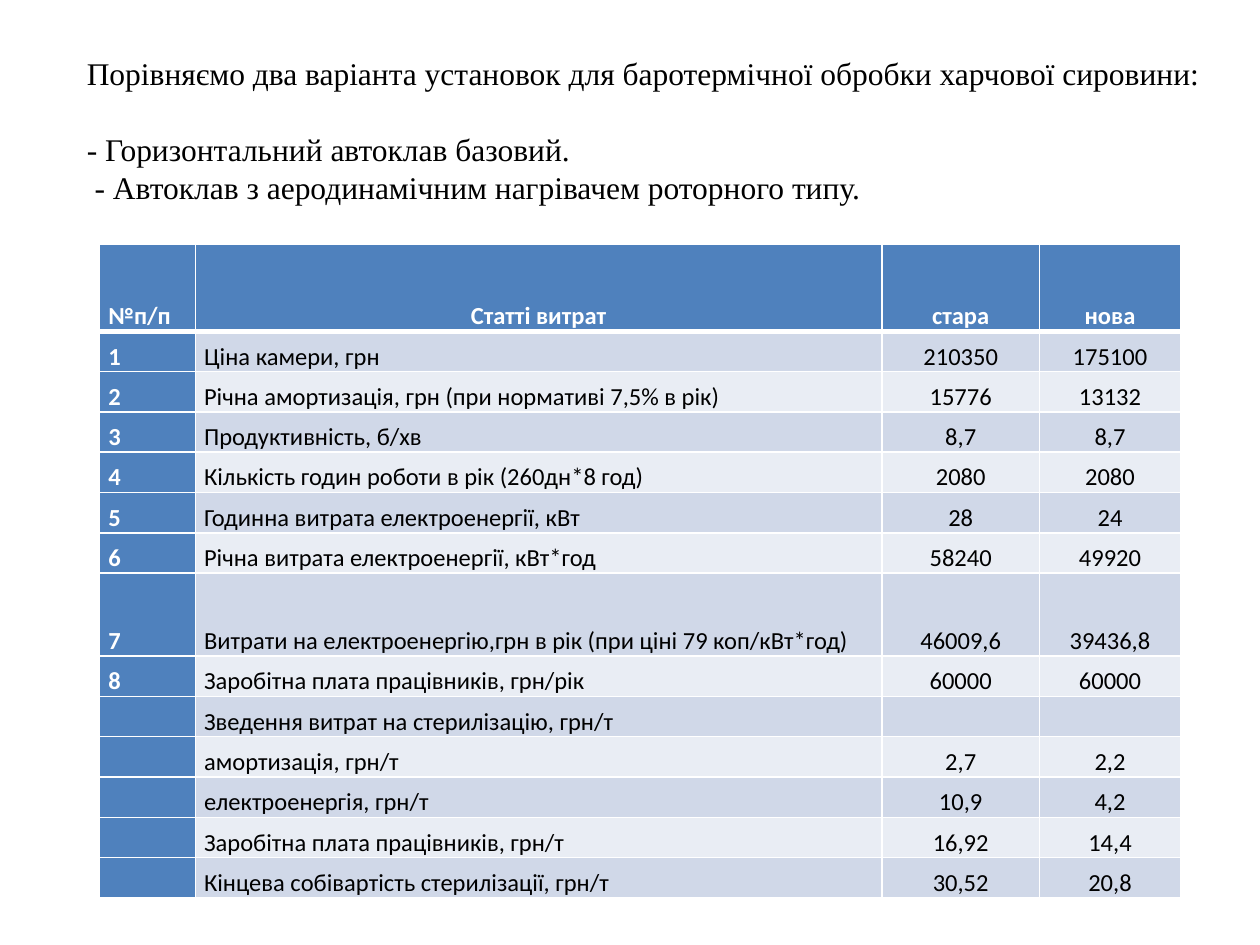
from dataclasses import dataclass

from lxml.etree import SubElement
from pptx import Presentation
from pptx.dml.color import RGBColor
from pptx.enum.text import MSO_ANCHOR as Anchor, MSO_AUTO_SIZE as AutoSize, PP_ALIGN as Align
from pptx.oxml.ns import qn
from pptx.util import Inches, Pt


@dataclass(frozen=True)
class Theme:
    accent: str = "4F81BD"
    bands: tuple = ("D0D8E8", "E9EDF4")
    light: str = "FFFFFF"
    dark: str = "000000"
    intro_font: str = "Times New Roman"
    table_font: str = "Calibri"
    intro_size: float = 18
    table_size: float = 14
    thin: float = 1
    thick: float = 3


INTRO = [
    "Порівняємо два варіанта установок для баротермічної обробки харчової сировини:",
    "- Горизонтальний автоклав базовий.",
    " - Автоклав з аеродинамічним нагрівачем роторного типу.",
]
COSTS = [
    ("№п/п", "Статті витрат", "стара", "нова"),
    ("1", "Ціна камери, грн", "210350", "175100"),
    ("2", "Річна амортизація, грн (при нормативі 7,5% в рік)", "15776", "13132"),
    ("3", "Продуктивність, б/хв", "8,7", "8,7"),
    ("4", "Кількість годин роботи в рік (260дн*8 год)", "2080", "2080"),
    ("5", "Годинна витрата електроенергії, кВт", "28", "24"),
    ("6", "Річна витрата електроенергії, кВт*год", "58240", "49920"),
    ("7", "Витрати на електроенергію,грн в рік (при ціні 79 коп/кВт*год)", "46009,6", "39436,8"),
    ("8", "Заробітна плата працівників, грн/рік", "60000", "60000"),
    ("", "Зведення витрат на стерилізацію, грн/т", "", ""),
    ("", "амортизація, грн/т", "2,7", "2,2"),
    ("", "електроенергія, грн/т", "10,9", "4,2"),
    ("", "Заробітна плата працівників, грн/т", "16,92", "14,4"),
    ("", "Кінцева собівартість стерилізації, грн/т", "30,52", "20,8"),
]
COLUMN_WIDTHS = (0.76, 5.45, 1.25, 1.12)
ROW_HEIGHT = 0.32
TALL_ROWS = {0: 0.69, 7: 0.66}


class SlideBuilder:
    def __init__(self, presentation, theme):
        self.theme = theme
        self.width = presentation.slide_width
        self.height = presentation.slide_height
        self.slide = presentation.slides.add_slide(presentation.slide_layouts[6])

    def box(self, left, top, width, height):
        """Turn percentages of the slide's size into lengths."""
        return (int(left * self.width / 100), int(top * self.height / 100),
                int(width * self.width / 100), int(height * self.height / 100))

    def style(self, paragraph, font_name, size, color, bold=False):
        font = paragraph.font
        font.name, font.size, font.bold = font_name, Pt(size), bold
        font.color.rgb = RGBColor.from_string(color)

    def text(self, lines, *place):
        frame = self.slide.shapes.add_textbox(*self.box(*place)).text_frame
        frame.word_wrap = False
        frame.auto_size = AutoSize.NONE
        frame.text = "\n".join(lines)
        for paragraph in frame.paragraphs:
            self.style(paragraph, self.theme.intro_font, self.theme.intro_size, self.theme.dark)
        # One line of air between the heading and the list
        frame.paragraphs[0].space_after = Pt(1.2 * self.theme.intro_size)

    def borders(self, cell, bottom):
        properties = cell._tc.get_or_add_tcPr()
        widths = {"a:lnL": self.theme.thin, "a:lnR": self.theme.thin,
                  "a:lnT": self.theme.thin, "a:lnB": bottom}
        for tag, width in widths.items():
            line = SubElement(properties, qn(tag), w=str(Pt(width)))
            fill = SubElement(line, qn("a:solidFill"))
            SubElement(fill, qn("a:srgbClr"), val=self.theme.light)

    def cell(self, cell, text, row, column):
        theme = self.theme
        is_header = row == 0
        is_accent = is_header or column == 0
        self.borders(cell, theme.thick if is_header else theme.thin)
        cell.fill.solid()
        color = theme.accent if is_accent else theme.bands[(row - 1) % 2]
        cell.fill.fore_color.rgb = RGBColor.from_string(color)
        cell.margin_left = cell.margin_right = Inches(0.07)
        cell.margin_top = cell.margin_bottom = 0
        cell.vertical_anchor = Anchor.BOTTOM
        cell.text = text
        paragraph = cell.text_frame.paragraphs[0]
        is_centred = column > 1 or (is_header and column == 1)
        paragraph.alignment = Align.CENTER if is_centred else Align.LEFT
        paragraph.line_spacing = 1.15
        paragraph.space_after = Pt(10)
        self.style(paragraph, theme.table_font, theme.table_size,
                   theme.light if is_accent else theme.dark, is_accent)

    def table(self, rows, column_widths, row_heights, *place):
        shape = self.slide.shapes.add_table(len(rows), len(column_widths), *self.box(*place))
        table = shape.table
        table.first_row = table.horz_banding = False
        for column, width in zip(table.columns, column_widths):
            column.width = Inches(width)
        for row, height in zip(table.rows, row_heights):
            row.height = Inches(height)
        for row, values in enumerate(rows):
            for column, value in enumerate(values):
                self.cell(table.cell(row, column), value, row, column)


def main():
    presentation = Presentation()
    presentation.slide_width, presentation.slide_height = Inches(10), Inches(7.5)
    builder = SlideBuilder(presentation, Theme())

    # Cost comparison
    row_heights = [TALL_ROWS.get(row, ROW_HEIGHT) for row in range(len(COSTS))]
    builder.table(COSTS, COLUMN_WIDTHS, row_heights, 7.9, 25.87, 85.8, 69.3)

    # Introduction above the table
    builder.text(INTRO, 5.9, 5.1, 91.2, 21.6)

    presentation.save("out.pptx")


if __name__ == "__main__":
    main()
